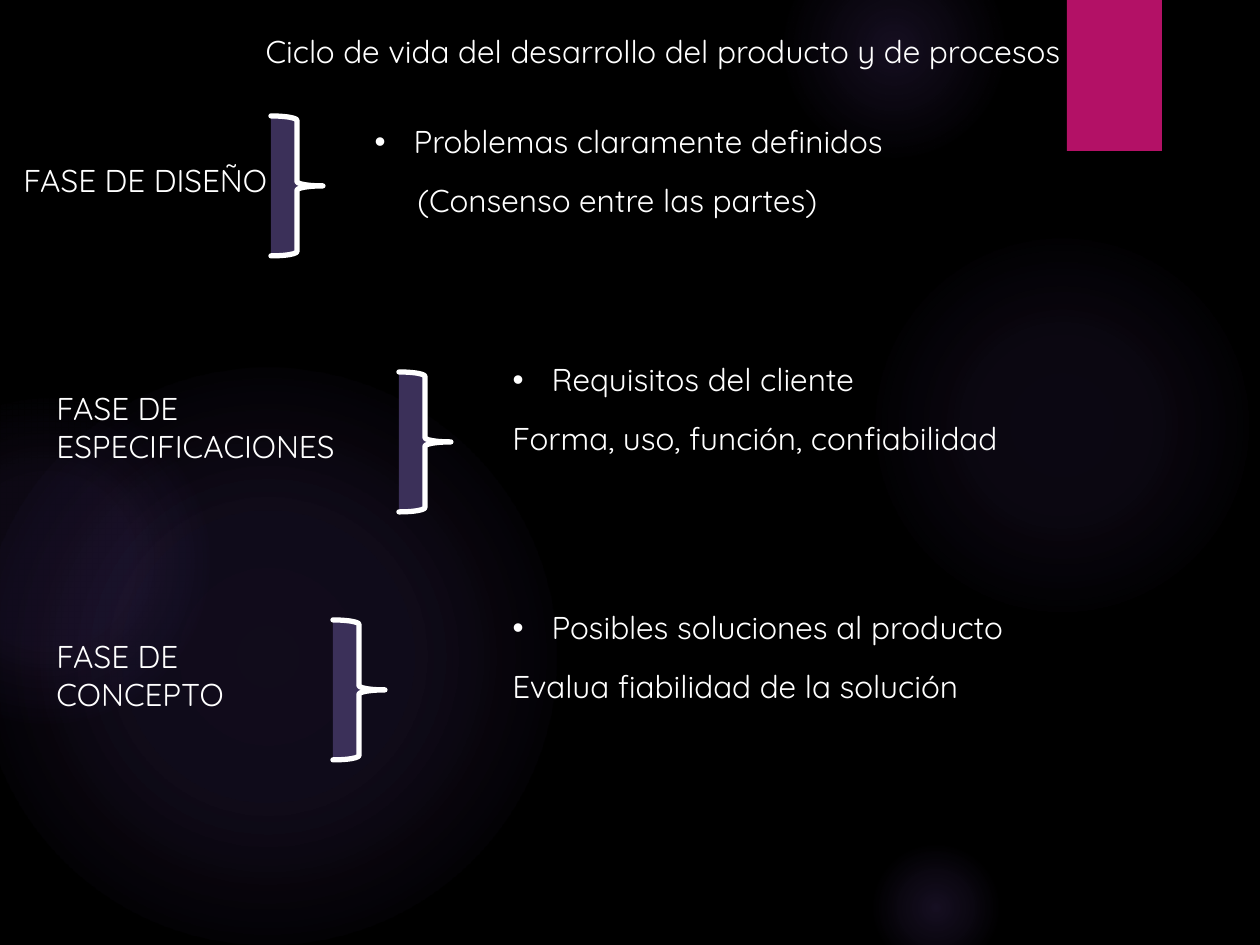
import lxml.etree
import pptx
import pptx.dml.color
import pptx.enum.shapes
import pptx.enum.text
import pptx.oxml
import pptx.oxml.ns
import pptx.util

RGB = pptx.dml.color.RGBColor
SHAPE = pptx.enum.shapes.MSO_SHAPE
qn = pptx.oxml.ns.qn

BLACK = RGB(0x00, 0x00, 0x00)
WHITE = RGB(0xFF, 0xFF, 0xFF)
PINK = RGB(0xB3, 0x11, 0x66)
PURPLE = RGB(0x3B, 0x30, 0x59)
GLOW = RGB(0x9B, 0x6B, 0xF2)

FONT = "Quicksand"
LINE_H = 50
DETAIL_DROP = 59
BULLET_INDENT = 39

# x, y, size, centre alpha, middle alpha, clear position (percent)
GLOWS = [
    (868, 231, 388, 7, 6, 69),
    (784, -63, 220, 14, 7, 73),
    (868, 840, 136, 14, 7, 66),
    (-21, 368, 577, 11, 10, 75),
    (-116, 399, 325, 8, 8, 72),
]

# label lines, label box, brace position, list position, item, detail, detail indent
PHASES = [
    (["FASE DE DISEÑO"], (11, 155, 271, 50), (271, 116), (362, 116, 582),
     "Problemas claramente definidos", "(Consenso entre las partes)", 43),
    (["FASE DE", "ESPECIFICACIONES"], (44, 383, 324, 89), (399, 372), (500, 354, 561),
     "Requisitos del cliente", "Forma, uso, función, confiabilidad", 0),
    (["FASE DE", "CONCEPTO"], (44, 631, 205, 89), (333, 620), (500, 602, 564),
     "Posibles soluciones al producto", "Evalua fiabilidad de la solución", 0),
]


def px(n):
    return pptx.util.Emu(round(n * 914400 / 126))


def place(sp, x, y, w, h):
    sp.left, sp.top, sp.width, sp.height = px(x), px(y), px(w), px(h)


def write(sp, lines, wrap=False, indent=0, bullet=False):
    tf = sp.text_frame
    tf.word_wrap = wrap
    tf.auto_size = pptx.enum.text.MSO_AUTO_SIZE.SHAPE_TO_FIT_TEXT
    tf.vertical_anchor = pptx.enum.text.MSO_ANCHOR.TOP
    for i, line in enumerate(lines):
        p = tf.add_paragraph() if i else tf.paragraphs[0]
        p.alignment = pptx.enum.text.PP_ALIGN.LEFT
        p.space_before = pptx.util.Pt(0)
        pPr = p._p.get_or_add_pPr()
        pPr.set("marL", str(px(indent)))
        pPr.set("indent", str(-px(indent) if bullet else 0))
        if bullet:
            lxml.etree.SubElement(pPr, qn("a:buFont")).set("typeface", "Arial")
            lxml.etree.SubElement(pPr, qn("a:buChar")).set("char", "•")
        r = p.add_run()
        r.text = line
        r.font.name = FONT
        r.font.size = pptx.util.Pt(18)
        r.font.bold = False
        r.font.color.rgb = WHITE


def add_text(s, box, lines, indent=0):
    sp = s.shapes.add_textbox(*map(px, box))
    write(sp, lines, indent=indent)


def fill_placeholder(s, sp, box, text, **style):
    s.shapes._spTree.append(sp._element)
    place(sp, *box)
    write(sp, [text], **style)


def add_shape(s, kind, box, color):
    sp = s.shapes.add_shape(kind, *map(px, box))
    sp.shadow.inherit = False
    sp.fill.solid()
    sp.fill.fore_color.rgb = color
    sp.line.fill.background()
    return sp


def add_glow(s, x, y, size, centre, middle, clear):
    sp = add_shape(s, SHAPE.OVAL, (x, y, size, size), GLOW)
    stops = "".join(
        f'<a:gs pos="{pos * 1000}"><a:srgbClr val="{GLOW}">'
        f'<a:alpha val="{alpha * 1000}"/></a:srgbClr></a:gs>'
        for pos, alpha in ((0, centre), (36, middle), (clear, 0)))
    grad = pptx.oxml.parse_xml(
        f'<a:gradFill {pptx.oxml.ns.nsdecls("a")}><a:gsLst>{stops}</a:gsLst>'
        '<a:path path="circle"><a:fillToRect l="50000" t="50000" r="50000" b="50000"/>'
        '</a:path></a:gradFill>')
    spPr = sp._element.spPr
    spPr.replace(spPr.find(qn("a:solidFill")), grad)


def add_brace(s, x, y):
    sp = add_shape(s, SHAPE.RIGHT_BRACE, (x, y, 52, 140), PURPLE)
    sp.line.color.rgb = WHITE
    sp.line.width = pptx.util.Pt(3)
    sp.line._get_or_add_ln().set("cap", "rnd")


def main():
    """Build the slide of product life cycle phases."""
    prs = pptx.Presentation()
    prs.slide_width, prs.slide_height = px(1260), px(945)
    s = prs.slides.add_slide(prs.slide_layouts.get_by_name("Comparison"))
    s.background.fill.solid()
    s.background.fill.fore_color.rgb = BLACK
    title, *bodies = [sp for sp in s.placeholders]

    for glow in GLOWS:
        add_glow(s, *glow)
    add_shape(s, SHAPE.RECTANGLE, (1067, 0, 95, 151), PINK)
    fill_placeholder(s, title, (253, 26, 932, LINE_H),
                     "Ciclo de vida del desarrollo del producto y de procesos", wrap=True)

    for body, (label, label_box, brace, (x, y, w), item, detail, indent) in zip(bodies, PHASES):
        add_text(s, label_box, label)
        add_brace(s, *brace)
        fill_placeholder(s, body, (x, y, w, LINE_H), item, indent=BULLET_INDENT, bullet=True)
        add_text(s, (x, y + DETAIL_DROP, w, LINE_H), [detail], indent)

    for sp in bodies[len(PHASES):]:
        sp._element.getparent().remove(sp._element)
    prs.save("out.pptx")


if __name__ == "__main__":
    main()
